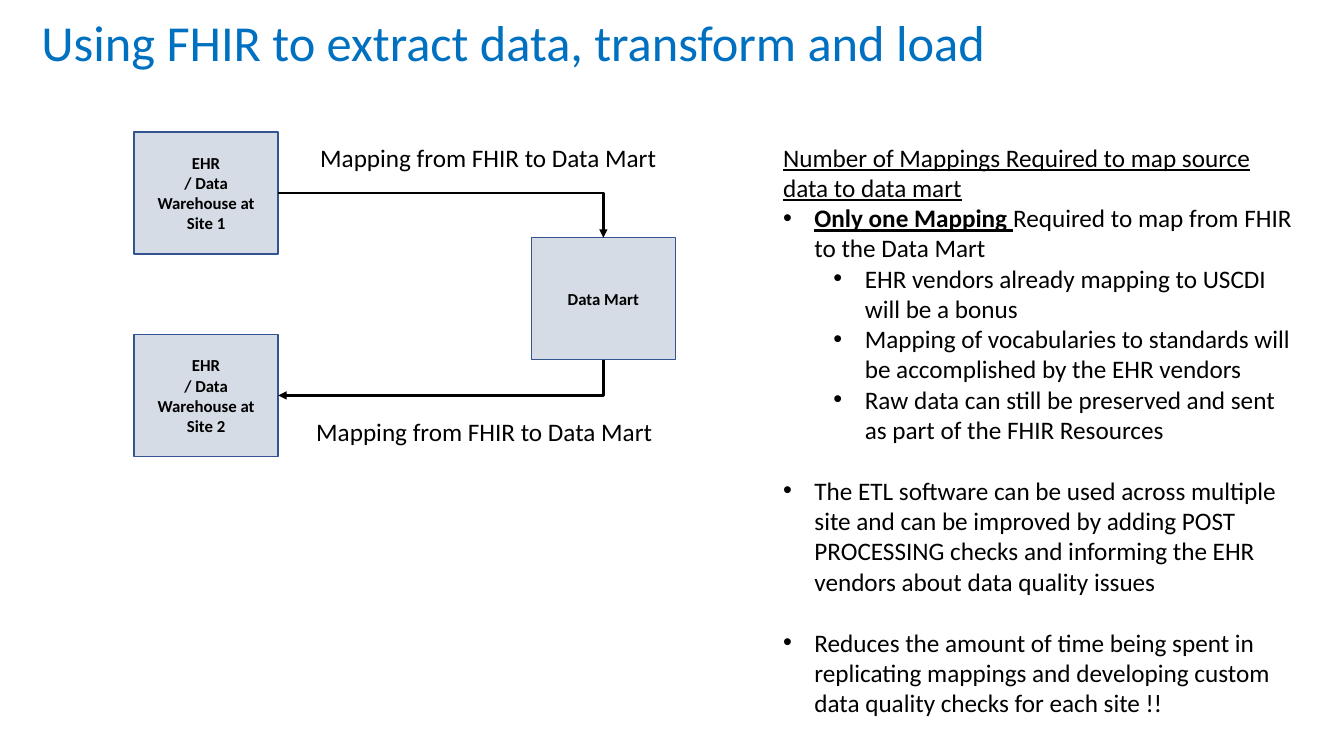
from lxml.etree import SubElement
from pptx import Presentation
from pptx.dml.color import RGBColor
from pptx.enum.shapes import MSO_CONNECTOR as Link, MSO_SHAPE as Preset
from pptx.enum.text import MSO_ANCHOR as Anchor, MSO_AUTO_SIZE as Fit, PP_ALIGN as Align
from pptx.oxml.ns import qn
from pptx.util import Cm, Pt

COLORS = {"title": "0070C0", "text": "000000", "box": "D6DCE5", "edge": "325491"}
FONT = "Calibri"
MAPPING = "Mapping from FHIR to Data Mart"
TOP, RIGHT, BOTTOM = 0, 3, 2
POINTS = [
    (None, 0, [("Number of Mappings Required to map source data to data mart", {"underline": True})]),
    (0, 0, [("Only one Mapping ", {"bold": True, "underline": True}),
            ("Required to map from FHIR to the Data Mart", {})]),
    (1, 0, [("EHR vendors already mapping to USCDI will be a bonus", {})]),
    (1, 0, [("Mapping of vocabularies to standards will be accomplished by the EHR vendors", {})]),
    (1, 0, [("Raw data can still be preserved and sent as part of the FHIR Resources", {})]),
    (0, 22, [("The ETL software can be used across multiple site and can be improved by adding "
              "POST PROCESSING checks and informing the EHR vendors about data quality issues", {})]),
    (0, 22, [("Reduces the amount of time being spent in replicating mappings and developing "
              "custom data quality checks for each site !!", {})]),
]


def color(name):
    """Return the named colour."""
    return RGBColor.from_string(COLORS[name])


def apply(target, values):
    """Set each attribute in values on the target."""
    for name, value in values.items():
        setattr(target, name, value)


def place(part, left, top, width, height):
    """Move a part to a box given in centimetres."""
    apply(part, {"left": Cm(left), "top": Cm(top), "width": Cm(width), "height": Cm(height)})


def write(paragraph, text, size, tint="text", **style):
    """Add one formatted run to a paragraph."""
    run = paragraph.add_run()
    run.text = text
    apply(run.font, {"name": FONT, "size": Pt(size), **style})
    run.font.color.rgb = color(tint)


def add_heading(slide, left, top, width, height):
    """Fill the title placeholder in its box."""
    title = slide.shapes.title
    place(title, left, top, width, height)
    apply(title.text_frame, {"vertical_anchor": Anchor.MIDDLE, "auto_size": Fit.NONE})
    paragraph = title.text_frame.paragraphs[0]
    apply(paragraph, {"alignment": Align.LEFT, "line_spacing": 0.9})
    write(paragraph, "Using FHIR to extract data, transform and load", 36, "title")


def add_system(slide, left, top, lines):
    """Draw one system box with centred bold lines."""
    system = slide.shapes.add_shape(Preset.RECTANGLE, Cm(left), Cm(top), Cm(3.63), Cm(3.07))
    system.shadow.inherit = False
    system.fill.solid()
    system.fill.fore_color.rgb = color("box")
    system.line.color.rgb = color("edge")
    system.line.width = Pt(1)
    frame = system.text_frame
    apply(frame, {"vertical_anchor": Anchor.MIDDLE, "word_wrap": True})
    for index, line in enumerate(lines):
        paragraph = frame.add_paragraph() if index else frame.paragraphs[0]
        paragraph.alignment = Align.CENTER
        write(paragraph, line, 12, bold=True)
    return system


def add_flow(slide, site, mart, mart_side, arrow_end):
    """Join a site to the data mart with a one-bend arrow."""
    flow = slide.shapes.add_connector(Link.ELBOW, 0, 0, 0, 0)
    flow.begin_connect(site, RIGHT)
    flow.end_connect(mart, mart_side)
    flow.line.color.rgb = color("text")
    flow.line.width = Pt(2)
    properties = flow._element.spPr
    properties.find(qn("a:prstGeom")).set("prst", "bentConnector2")
    SubElement(properties.find(qn("a:ln")), qn(arrow_end), type="triangle")
    SubElement(properties, qn("a:effectLst"))


def add_label(slide, left, top):
    """Write the mapping label beside a flow."""
    label = slide.shapes.add_textbox(Cm(left), Cm(top), Cm(9.07), Cm(1.02))
    apply(label.text_frame, {"word_wrap": False, "auto_size": Fit.SHAPE_TO_FIT_TEXT})
    write(label.text_frame.paragraphs[0], MAPPING, 18)


def add_diagram(slide, left, top):
    """Draw both sites, the data mart and the flows between them."""
    first, second = [
        add_system(slide, left, top + index * 5.1, ["EHR", f"/ Data Warehouse at Site {index + 1}"])
        for index in range(2)
    ]
    mart = add_system(slide, left + 10.01, top + 2.66, ["Data Mart"])
    add_flow(slide, first, mart, TOP, "a:tailEnd")
    add_flow(slide, second, mart, BOTTOM, "a:headEnd")
    add_label(slide, left + 4.44, top + 0.12)
    add_label(slide, left + 4.34, top + 7.03)


def set_bullet(paragraph, level):
    """Indent a paragraph by level, with no bullet when level is None."""
    properties = paragraph._p.get_or_add_pPr()
    if level is None:
        margin, hang = 0, 0
        SubElement(properties, qn("a:buNone"))
    else:
        paragraph.level = level
        margin, hang = Cm(0.79 + 1.27 * level), Cm(-0.79)
        SubElement(properties, qn("a:buFont"), typeface="Arial")
        SubElement(properties, qn("a:buChar"), char="•")
    properties.set("marL", str(int(margin)))
    properties.set("indent", str(int(hang)))


def add_points(slide, left, top, width, height):
    """Fill the body placeholder with the mapping points."""
    body = slide.placeholders[1]
    place(body, left, top, width, height)
    frame = body.text_frame
    apply(frame, {"word_wrap": True, "auto_size": Fit.NONE, "vertical_anchor": Anchor.TOP})
    for index, (level, gap, pieces) in enumerate(POINTS):
        paragraph = frame.add_paragraph() if index else frame.paragraphs[0]
        apply(paragraph, {"space_before": Pt(gap), "space_after": Pt(0), "line_spacing": 1.0})
        set_bullet(paragraph, level)
        for text, style in pieces:
            write(paragraph, text, 18, **style)


def main():
    """Build and save the slide."""
    deck = Presentation()
    apply(deck, {"slide_width": Cm(33.87), "slide_height": Cm(19.05)})
    slide = deck.slides.add_slide(deck.slide_layouts[1])
    add_heading(slide, 0.79, -0.18, 29.21, 2.64)
    add_diagram(slide, 3.38, 3.33)
    add_points(slide, 19.48, 3.45, 13.41, 14.88)
    deck.save("out.pptx")


if __name__ == "__main__":
    main()
